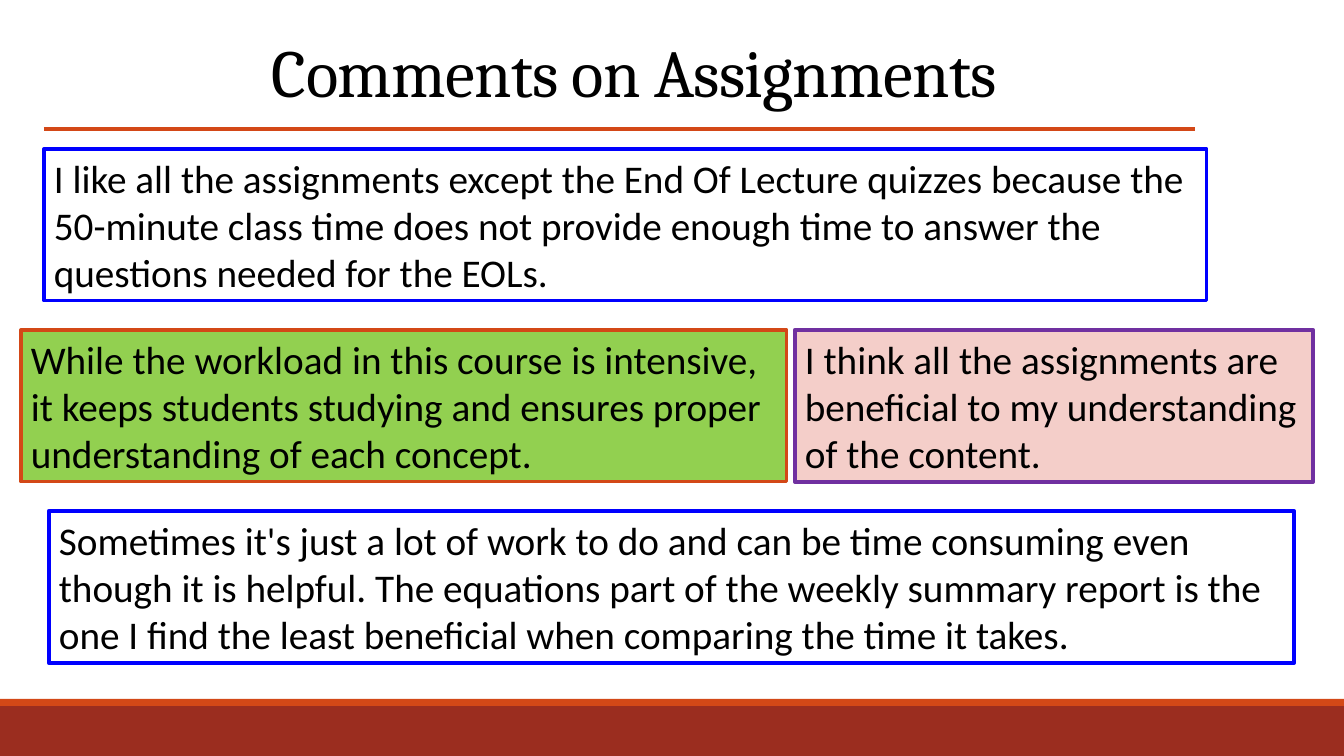
from lxml import etree
from pptx import Presentation
from pptx.dml.color import RGBColor
from pptx.enum.shapes import MSO_CONNECTOR, MSO_SHAPE
from pptx.enum.text import MSO_ANCHOR, MSO_AUTO_SIZE, PP_ALIGN
from pptx.oxml.ns import qn
from pptx.util import Emu, Pt

RECT = MSO_SHAPE.RECTANGLE
STRAIGHT = MSO_CONNECTOR.STRAIGHT
TOP, MIDDLE = MSO_ANCHOR.TOP, MSO_ANCHOR.MIDDLE
LEFT, CENTER = PP_ALIGN.LEFT, PP_ALIGN.CENTER
GROW = MSO_AUTO_SIZE.SHAPE_TO_FIT_TEXT

WIDE, HIGH = 1344, 756
ORANGE, BLUE, BLACK = "D34817", "0000FF", "000000"

TITLE = "Comments on Assignments"
BARS = [(706, 50, "9B2D1F"), (699, 7, ORANGE)]  # top, height, fill
RULE = (44, 1195, 129)  # from x, to x, y

BOX_TOP, BOX_STEP, BOX_HIGH = 149, 181, 152
# row, left, width, fill, line colour, line points, comment
COMMENTS = [
    (0, 44, 1163, None, BLUE, 2.25,
     "I like all the assignments except the End Of Lecture quizzes because "
     "the 50-minute class time does not provide enough time to answer the "
     "questions needed for the EOLs."),
    (1, 21, 766, "92D050", ORANGE, 2.25,
     "While the workload in this course is intensive, it keeps students "
     "studying and ensures proper understanding of each concept."),
    (1, 795, 518, "F4CEC9", "7030A0", 3,
     "I think all the assignments are beneficial to my understanding of "
     "the content."),
    (2, 49, 1245, None, BLUE, 3,
     "Sometimes it's just a lot of work to do and can be time consuming even "
     "though it is helpful. The equations part of the weekly summary report "
     "is the one I find the least beneficial when comparing the time it "
     "takes."),
]


def px(*sizes):
    return [Emu(round(size * 914400 / 100.8)) for size in sizes]


def color(code):
    return RGBColor.from_string(code)


def add_rect(shapes, place, fill=None, line=None, width=0):
    rect = shapes.add_shape(RECT, *px(*place))
    rect.shadow.inherit = False
    if fill:
        rect.fill.solid()
        rect.fill.fore_color.rgb = color(fill)
    else:
        rect.fill.background()
    if line:
        rect.line.color.rgb = color(line)
        rect.line.width = Pt(width)
    else:
        rect.line.fill.background()
    return rect


def write(shape, text, font, size, align, anchor):
    """Put one wrapped paragraph into the shape and return it."""
    frame = shape.text_frame
    frame.text = text
    frame.word_wrap = True
    frame.vertical_anchor = anchor
    para = frame.paragraphs[0]
    para.alignment = align
    style = para.runs[0].font
    style.name, style.size = font, Pt(size)
    style.color.rgb = color(BLACK)
    return para


def main():
    deck = Presentation()
    deck.slide_width, deck.slide_height = px(WIDE, HIGH)
    shapes = deck.slides.add_slide(deck.slide_layouts[6]).shapes

    for top, high, fill in BARS:
        add_rect(shapes, (0, top, WIDE, high), fill)

    title = shapes.add_textbox(*px(55, 31, 1159, 90))
    para = write(title, TITLE, "Cambria", 48, CENTER, MIDDLE)
    para.line_spacing = 0.9
    para.runs[0].font._element.set("spc", "-50")

    start, end, level = RULE
    rule = shapes.add_connector(STRAIGHT, *px(start, level, end, level))
    rule.line.color.rgb = color(ORANGE)
    rule.line.width = Pt(2.25)
    etree.SubElement(rule._element.spPr, qn("a:effectLst"))

    for row, left, wide, fill, line, width, text in COMMENTS:
        place = (left, BOX_TOP + row * BOX_STEP, wide, BOX_HIGH)
        box = add_rect(shapes, place, fill, line, width)
        write(box, text, "Calibri", 28, LEFT, TOP)
        box.text_frame.auto_size = GROW

    deck.save("out.pptx")


if __name__ == "__main__":
    main()
